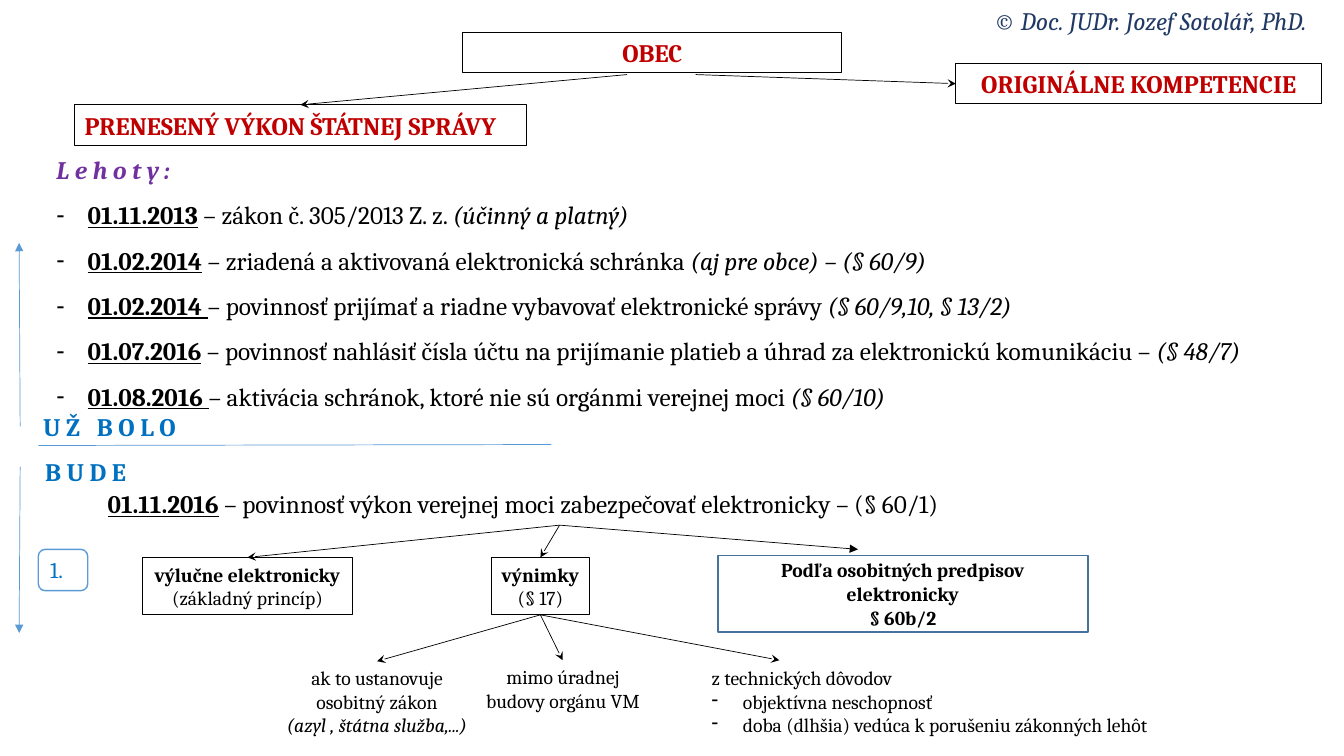
from lxml import etree
from pptx import Presentation
from pptx.dml.color import RGBColor
from pptx.enum import shapes, text
from pptx.oxml import ns
from pptx.util import Inches, Pt

BLACK = RGBColor(0x00, 0x00, 0x00)
WHITE = RGBColor(0xFF, 0xFF, 0xFF)
RED = RGBColor(0xC0, 0x00, 0x00)
PURPLE = RGBColor(0x70, 0x30, 0xA0)
BLUE = RGBColor(0x00, 0x70, 0xC0)
NAVY = RGBColor(0x20, 0x38, 0x64)
SKY = RGBColor(0x5B, 0x9B, 0xD5)
STEEL = RGBColor(0x43, 0x73, 0x9E)
LEFT, CENTER = text.PP_ALIGN.LEFT, text.PP_ALIGN.CENTER


def write(frame, paragraphs, size, color=BLACK, align=LEFT, wrap=False):
    """Each paragraph is (runs, options); options hold b, i, u and "-" for a dash bullet."""
    frame.word_wrap = wrap
    frame.auto_size = text.MSO_AUTO_SIZE.NONE
    for index, (runs, options) in enumerate(paragraphs):
        paragraph = frame.paragraphs[0] if index == 0 else frame.add_paragraph()
        paragraph.alignment = align
        paragraph.space_before = Pt(0)
        properties = paragraph._p.get_or_add_pPr()
        dashed = "-" in options
        properties.set("marL", str(Inches(0.31) if dashed else 0))
        properties.set("indent", str(Inches(-0.31) if dashed else 0))
        if dashed:
            etree.SubElement(properties, ns.qn("a:buFontTx"))
            etree.SubElement(properties, ns.qn("a:buChar")).set("char", "-")
        else:
            etree.SubElement(properties, ns.qn("a:buNone"))
        font = paragraph.font
        font.name, font.size = "Cambria", Pt(size)
        font.color.rgb = color
        font.bold, font.italic = "b" in options, "i" in options
        if isinstance(runs, str):
            runs = [(runs, "")]
        for words, style in runs:
            run = paragraph.add_run()
            run.text = words
            if "b" in style:
                run.font.bold = True
            if "i" in style:
                run.font.italic = True
            if "u" in style:
                run.font.underline = True


def place(shape, left, top, width, height):
    shape.left, shape.top = Inches(left), Inches(top)
    shape.width, shape.height = Inches(width), Inches(height)


deck = Presentation()
deck.slide_width, deck.slide_height = Inches(13.33), Inches(7.5)
slide = deck.slides.add_slide(deck.slide_layouts[1])

# Title and the list of deadlines
title = slide.shapes.title
place(title, 4.59, 0.32, 3.76, 0.4)
title.line.color.rgb = BLACK
title.line.width = Pt(0.75)
title.text_frame.vertical_anchor = text.MSO_ANCHOR.TOP
write(title.text_frame, [("OBEC", "b")], 18, RED, CENTER, True)

deadlines = [
    ("01.11.2013", " – zákon č. 305/2013 Z. z. ", "(účinný a platný)"),
    ("01.02.2014", " – zriadená a aktivovaná elektronická schránka ", "(aj pre obce) – (§ 60/9)"),
    ("01.02.2014 ", "– povinnosť prijímať a riadne vybavovať elektronické správy ",
     "(§ 60/9,10, § 13/2)"),
    ("01.07.2016", " – povinnosť nahlásiť čísla účtu na prijímanie platieb a úhrad "
     "za elektronickú komunikáciu – ", "(§ 48/7)"),
    ("01.08.2016 ", "– aktivácia schránok, ktoré nie sú orgánmi verejnej moci ", "(§ 60/10)"),
]
body = slide.placeholders[1]
place(body, 0.46, 1.48, 12.58, 2.68)
write(body.text_frame, [("L e h o t y :", "bi")] + [
    ([(date, "bu"), (duty, ""), (section, "i")], "-") for date, duty, section in deadlines], 18)
heading, *items = body.text_frame.paragraphs
heading.font.color.rgb = PURPLE
for item in items:
    item.line_spacing = 1.5

# Boxes: place, paragraphs, size, text colour, alignment, wrap, line colour, line width
RECT, ROUNDED = shapes.MSO_SHAPE.RECTANGLE, shapes.MSO_SHAPE.ROUNDED_RECTANGLE
boxes = []
for kind, box_place, paragraphs, size, color, align, wrap, edge, weight in [
    (RECT, (0.74, 1.04, 4.48, 0.4), [("PRENESENÝ VÝKON ŠTÁTNEJ SPRÁVY", "b")],
     18, RED, LEFT, True, BLACK, 0.75),
    (RECT, (9.48, 0.63, 3.63, 0.4), [("ORIGINÁLNE KOMPETENCIE", "b")],
     18, RED, CENTER, True, BLACK, 0.75),
    (RECT, (1.41, 5.53, 2.09, 0.57), [("výlučne elektronicky", "b"), ("(základný princíp)", "")],
     14, BLACK, CENTER, False, BLACK, 0.75),
    (RECT, (4.87, 5.53, 0.98, 0.57), [("výnimky", "b"), ("(§ 17)", "")],
     14, BLACK, CENTER, False, BLACK, 0.75),
    (RECT, (7.12, 5.51, 3.67, 0.76),
     [("Podľa osobitných predpisov elektronicky", "b"), ("§ 60b/2", "b")],
     14, BLACK, CENTER, True, STEEL, 1),
    (ROUNDED, (0.38, 5.45, 0.49, 0.41), [("1.", "")], 16, BLUE, LEFT, True, SKY, 1),
]:
    box = slide.shapes.add_shape(kind, *map(Inches, box_place))
    box.shadow.inherit = False
    box.fill.solid()
    box.fill.fore_color.rgb = WHITE
    box.line.color.rgb = edge
    box.line.width = Pt(weight)
    box.text_frame.vertical_anchor = text.MSO_ANCHOR.MIDDLE
    write(box.text_frame, paragraphs, size, color, align, wrap)
    boxes.append(box)
delegated, original, exclusive, exceptions, special, step = boxes

# Free text
past_label = [("U Ž", ""), (" ", ""), ("B O L O", "")]
labels = []
for label_place, paragraphs, size, color, align in [
    ((0.97, 4.8, 9.16, 0.4), [([("01.11.2016", "bu"), (
        " – povinnosť výkon verejnej moci zabezpečovať elektronicky – (§ 60/1)", "")], "")],
     18, BLACK, LEFT),
    ((2.7, 6.56, 2.08, 0.81), [("ak to ustanovuje", ""), ("osobitný zákon", ""),
                               ("(azyl , štátna služba,...)", "i")], 14, BLACK, CENTER),
    ((4.67, 6.55, 1.83, 0.57), [("mimo úradnej", ""), ("budovy orgánu VM", "")],
     14, BLACK, CENTER),
    ((6.96, 6.56, 4.72, 0.81), [
        ("z technických dôvodov", ""), ("objektívna neschopnosť", "-"),
        ("doba (dlhšia) vedúca k porušeniu zákonných lehôt", "-")], 14, BLACK, LEFT),
    ((0.35, 4.48, 1.8, 0.4), [("B U D E", "b")], 18, BLUE, LEFT),
    ((9.76, 0, 3.47, 0.4), [("© Doc. JUDr. Jozef Sotolář, PhD.", "i")], 18, NAVY, LEFT),
    ((0.33, 4.03, 1.82, 0.4), [(past_label, "b")], 18, BLUE, LEFT),
]:
    label = slide.shapes.add_textbox(*map(Inches, label_place))
    write(label.text_frame, paragraphs, size, color, align)
    labels.append(label)
# Widen the gap between the two words of the last label
word_gap = labels[-1].text_frame.paragraphs[0].runs[1]
word_gap._r.get_or_add_rPr().set("spc", "800")

# Lines: start, end, colour, arrowhead, joined start and joined end
duty_foot, exceptions_foot = (5.55, 5.21), (5.36, 6.1)
for start, end, color, head, source, target in [
    ((6.22, 0.74), (2.98, 1.04), BLACK, "stealth", None, (delegated, 0)),
    ((6.9, 0.74), (9.48, 0.83), BLACK, "stealth", None, (original, 1)),
    (duty_foot, (2.45, 5.53), BLACK, "stealth", None, (exclusive, 0)),
    (duty_foot, (5.36, 5.53), BLACK, "stealth", None, (exceptions, 0)),
    (duty_foot, (8.51, 5.45), BLACK, "triangle", None, None),
    (exceptions_foot, (3.74, 6.56), BLACK, "stealth", (exceptions, 2), None),
    (exceptions_foot, (5.58, 6.55), BLACK, "stealth", (exceptions, 2), None),
    (exceptions_foot, (7.73, 6.55), BLACK, "stealth", (exceptions, 2), None),
    ((0.38, 4.42), (5.47, 4.41), SKY, None, None, None),
    ((0.2, 4.23), (0.19, 2.41), SKY, "triangle", None, None),
    ((0.2, 4.63), (0.19, 6.28), SKY, "triangle", None, None),
]:
    line = slide.shapes.add_connector(
        shapes.MSO_CONNECTOR.STRAIGHT, *map(Inches, start + end))
    if source:
        line.begin_connect(*source)
    if target:
        line.end_connect(*target)
    line.line.color.rgb = color
    line.line.width = Pt(0.5)
    if head:
        etree.SubElement(line.line._get_or_add_ln(), ns.qn("a:tailEnd")).set("type", head)
    etree.SubElement(line._element.spPr, ns.qn("a:effectLst"))

deck.save("out.pptx")
